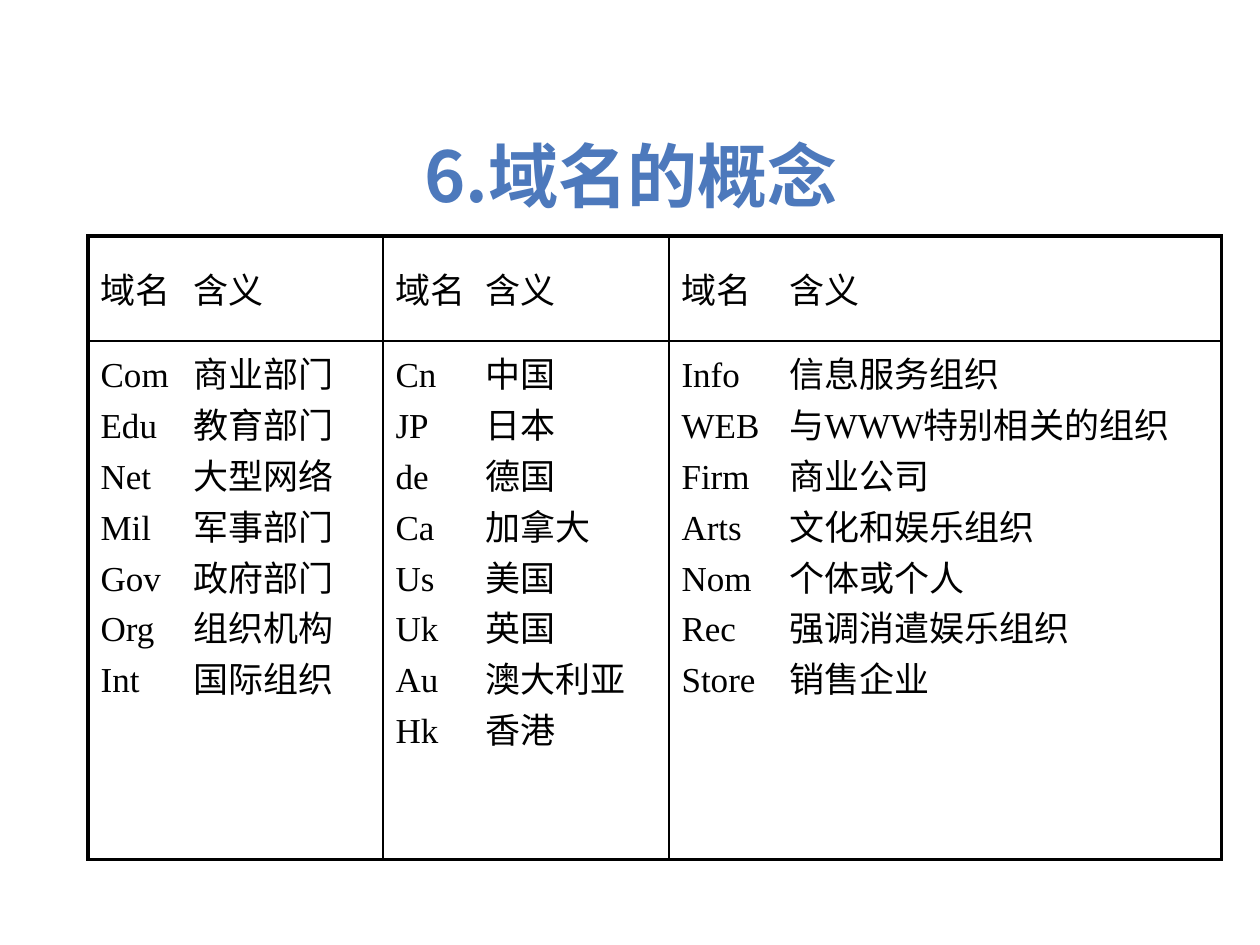
from typing import NamedTuple

from lxml import etree
from pptx import Presentation
from pptx.dml.color import RGBColor
from pptx.enum.text import MSO_ANCHOR, PP_ALIGN
from pptx.oxml.ns import qn
from pptx.util import Emu, Pt

EMU_PER_PX = 914400 / 126
MIDDLE, TOP = MSO_ANCHOR.MIDDLE, MSO_ANCHOR.TOP
CENTER = PP_ALIGN.CENTER
COLORS = {"title": "4D79BC", "text": "000000", "border": "000000"}
CJK_FONT, LATIN_FONT = "Noto Sans CJK SC", "Times New Roman"
OUTER_PT, INNER_PT = 2, 1
ROW_HEIGHTS = (105, 519)


class DomainGroup(NamedTuple):
    width: int
    meaning_tab: int
    entries: tuple[tuple[str, str], ...]


HEADING = ("域名", "含义")
GROUPS = (
    DomainGroup(295, 93, (
        ("Com", "商业部门"), ("Edu", "教育部门"), ("Net", "大型网络"),
        ("Mil", "军事部门"), ("Gov", "政府部门"), ("Org", "组织机构"),
        ("Int", "国际组织"))),
    DomainGroup(286, 90, (
        ("Cn", "中国"), ("JP", "日本"), ("de", "德国"), ("Ca", "加拿大"),
        ("Us", "美国"), ("Uk", "英国"), ("Au", "澳大利亚"), ("Hk", "香港"))),
    DomainGroup(553, 108, (
        ("Info", "信息服务组织"), ("WEB", "与WWW特别相关的组织"),
        ("Firm", "商业公司"), ("Arts", "文化和娱乐组织"),
        ("Nom", "个体或个人"), ("Rec", "强调消遣娱乐组织"),
        ("Store", "销售企业"))),
)


def px(length: int) -> Emu:
    return Emu(round(length * EMU_PER_PX))


def add_run(paragraph, text: str, size: int, latin: str, color: str, bold: bool = False) -> None:
    run = paragraph.add_run()
    run.text = text
    run.font.size = Pt(size)
    run.font.bold = bold
    run.font.color.rgb = RGBColor.from_string(COLORS[color])
    run.font.name = latin
    etree.SubElement(run._r.get_or_add_rPr(), qn("a:ea"), typeface=CJK_FONT)


def add_tab_stop(paragraph, position: int) -> None:
    tabs = etree.SubElement(paragraph._p.get_or_add_pPr(), qn("a:tabLst"))
    etree.SubElement(tabs, qn("a:tab"), pos=str(px(position)), algn="l")


def set_borders(cell, outer_sides: dict[str, bool]) -> None:
    """Draw table edges thick and inner rules thin."""
    properties = cell._tc.get_or_add_tcPr()
    for side, is_outer in outer_sides.items():
        width = Pt(OUTER_PT if is_outer else INNER_PT)
        line = etree.SubElement(properties, qn(f"a:ln{side}"), w=str(width))
        fill = etree.SubElement(line, qn("a:solidFill"))
        etree.SubElement(fill, qn("a:srgbClr"), val=COLORS["border"])


def fill_cell(cell, entries: tuple[tuple[str, str], ...], tab: int) -> None:
    frame = cell.text_frame
    for index, (domain, meaning) in enumerate(entries):
        paragraph = frame.add_paragraph() if index else frame.paragraphs[0]
        add_tab_stop(paragraph, tab)
        add_run(paragraph, f"{domain}\t{meaning}", 20, LATIN_FONT, "text")


def add_title(slide) -> None:
    title = slide.shapes.title
    title.left, title.top, title.width, title.height = map(px, (64, 125, 1134, 100))
    title.text_frame.vertical_anchor = MIDDLE
    paragraph = title.text_frame.paragraphs[0]
    paragraph.alignment = CENTER
    add_run(paragraph, "6.域名的概念", 40, CJK_FONT, "title", bold=True)


def add_domain_table(slide) -> None:
    width = sum(group.width for group in GROUPS)
    table = slide.shapes.add_table(
        len(ROW_HEIGHTS), len(GROUPS), px(88), px(236), px(width), px(sum(ROW_HEIGHTS))
    ).table
    table.first_row = table.horz_banding = False
    for row, height in zip(table.rows, ROW_HEIGHTS):
        row.height = px(height)
    for column, group in enumerate(GROUPS):
        table.columns[column].width = px(group.width)
        for row, entries in enumerate(((HEADING,), group.entries)):
            cell = table.cell(row, column)
            fill_cell(cell, entries, group.meaning_tab)
            cell.vertical_anchor = TOP if row else MIDDLE
            set_borders(cell, {
                "L": column == 0,
                "R": column == len(GROUPS) - 1,
                "T": row == 0,
                "B": row == len(ROW_HEIGHTS) - 1,
            })
            cell.fill.background()


def main() -> None:
    presentation = Presentation()
    presentation.slide_width, presentation.slide_height = px(1260), px(945)
    slide = presentation.slides.add_slide(presentation.slide_layouts[5])
    add_title(slide)
    add_domain_table(slide)
    presentation.save("out.pptx")


if __name__ == "__main__":
    main()
